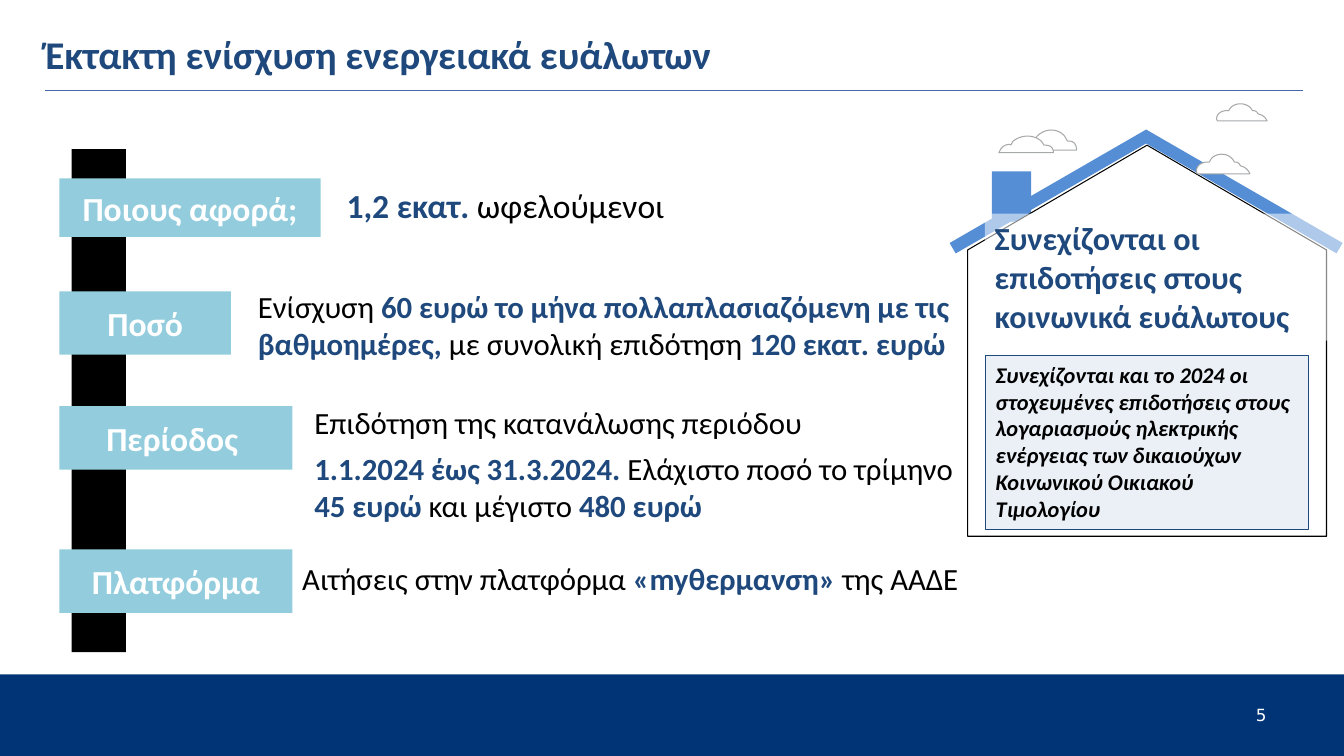
import pptx
import pptx.dml.color
import pptx.enum.shapes
import pptx.enum.text
import pptx.oxml
import pptx.oxml.ns
import pptx.util

THEME = {
    "navy": "003476", "blue": "1F497D", "rule": "4966AC", "roof": "558ED5",
    "label": "93CDDD", "note": "DCE6F2", "cloud": "A7A8AA",
    "black": "000000", "white": "FFFFFF",
    "font": "Calibri", "number_font": "DejaVu Sans",
    "title": 28, "heading": 24, "house": 23, "body": 22, "small": 16, "number": 12,
}
CELL = pptx.util.Inches(0.1)  # one column or row of the page grid
COLUMNS, ROWS = 133.33, 75
SHAPES = pptx.enum.shapes.MSO_SHAPE
MIDDLE = pptx.enum.text.MSO_ANCHOR.MIDDLE
CENTER = pptx.enum.text.PP_ALIGN.CENTER


def paint(shape, fill=None, line=None, opacity=100, weight=0.75):
    """Set fill and outline from theme colours and drop the shadow."""
    shape.shadow.inherit = False
    if fill:
        shape.fill.solid()
        shape.fill.fore_color.rgb = pptx.dml.color.RGBColor.from_string(THEME[fill])
        if opacity < 100:
            color = shape.fill._xPr.find(".//" + pptx.oxml.ns.qn("a:srgbClr"))
            alpha = color.makeelement(pptx.oxml.ns.qn("a:alpha"), {"val": str(opacity * 1000)})
            color.append(alpha)
    if line:
        shape.line.color.rgb = pptx.dml.color.RGBColor.from_string(THEME[line])
        shape.line.width = pptx.util.Pt(weight)
    else:
        shape.line.fill.background()
    return shape


def write(box, paragraphs, size="body", color="black", font="font", bold=False, italic=False,
          align=pptx.enum.text.PP_ALIGN.LEFT, anchor=pptx.enum.text.MSO_ANCHOR.TOP,
          margins=(0.1, 0.05), gap=0, line_spacing=None):
    """Fill a box with paragraphs, each a list of (text, is_key); key text is bold blue."""
    frame = box.text_frame
    frame.word_wrap = True
    frame.vertical_anchor = anchor
    frame.margin_left = frame.margin_right = pptx.util.Inches(margins[0])
    frame.margin_top = frame.margin_bottom = pptx.util.Inches(margins[1])
    for index, parts in enumerate(paragraphs):
        para = frame.add_paragraph() if index else frame.paragraphs[0]
        para.alignment = align
        para.line_spacing = line_spacing
        if index:
            para.space_before = pptx.util.Pt(gap)
        for text, is_key in parts:
            span = para.add_run()
            span.text = text
            span.font.name = THEME[font]
            span.font.size = pptx.util.Pt(THEME[size])
            span.font.bold = bold or is_key
            span.font.italic = italic
            span.font.color.rgb = pptx.dml.color.RGBColor.from_string(
                THEME["blue" if is_key else color])


deck = pptx.Presentation()
deck.slide_width, deck.slide_height = int(COLUMNS * CELL), ROWS * CELL
page = deck.slides.add_slide(deck.slide_layouts[6])
shapes = page.shapes

# Footer band, title and rule
footer = shapes.add_shape(SHAPES.RECTANGLE, 0, int(66.9 * CELL), deck.slide_width, int(8.1 * CELL))
paint(footer, "navy")
rule = shapes.add_connector(pptx.enum.shapes.MSO_CONNECTOR.STRAIGHT,
                            *[int(n * CELL) for n in (4.5, 9, 129.3, 9)])
rule.line.color.rgb = pptx.dml.color.RGBColor.from_string(THEME["rule"])
rule.line.width = pptx.util.Pt(0.96)
rule._element.spPr.append(pptx.oxml.parse_xml(
    f'<a:effectLst {pptx.oxml.ns.nsdecls("a")}/>'))
title = shapes.add_textbox(*[int(n * CELL) for n in (4.5, 0.5, 124.4, 9.7)])
write(title, [[("Έκτακτη ενίσχυση ενεργειακά ευάλωτων", True)]], size="title",
      anchor=MIDDLE, margins=(0, 0))

# House: chimney, walls and a roof mirrored about the apex
chimney = shapes.add_shape(SHAPES.RECTANGLE, *[int(n * CELL) for n in (98.4, 17, 3.9, 5)])
paint(chimney, "roof")
walls = shapes.add_shape(SHAPES.UP_ARROW, *[int(n * CELL) for n in (96, 14.4, 35.6, 38.8)])
walls.adjustments[0], walls.adjustments[1] = 1, 0.292
paint(walls, "white", "black")
APEX, SLOPE_LENGTH, SLOPE_OFFSET = 113.7, 22.5, 9.45
for side in (-1, 1):
    left = APEX + side * SLOPE_OFFSET - SLOPE_LENGTH / 2
    slope = shapes.add_shape(SHAPES.RECTANGLE,
                             *[int(n * CELL) for n in (left, 18.4, SLOPE_LENGTH, 1.2)])
    slope.rotation = side * 30
    paint(slope, "roof")

# Cloud outlines as shares of their box: one point is a line, three are a curve
STEPPED = [[(0.47, 0)], [(0.58, 0), (0.67, 0.16), (0.71, 0.4)], [(0.73, 0.4)],
           [(0.77, 0.4), (0.8, 0.47), (0.82, 0.57)], [(0.83, 0.6)],
           [(0.91, 0.64), (0.97, 0.8), (1, 1)], [(0.02, 1)],
           [(0, 0.95), (0, 0.9), (0, 0.85)], [(0, 0.6), (0.09, 0.4), (0.2, 0.4)],
           [(0.24, 0.4)], [(0.26, 0.3)], [(0.3, 0.1), (0.39, 0), (0.47, 0)]]
ROUND = [[(0.52, 0)], [(0.63, 0), (0.72, 0.12), (0.78, 0.31)], [(0.83, 0.55)],
         [(0.87, 0.55)], [(0.94, 0.55), (1, 0.72), (1, 0.94)], [(1, 1)], [(0, 1)],
         [(0.02, 0.88)], [(0.04, 0.69), (0.11, 0.5), (0.19, 0.5)], [(0.22, 0.53)],
         [(0.26, 0.31)], [(0.33, 0.12), (0.43, 0), (0.52, 0)]]
STEPS = 8
for outline, left, top, width, height in [
        (STEPPED, 118.7, 15.3, 5.3, 1.95), (ROUND, 101.5, 12.9, 5.3, 2),
        (ROUND, 99.1, 13.5, 5.4, 1.65), (STEPPED, 120.7, 10.3, 5, 1.7)]:
    points = list(outline[0])
    for segment in outline[1:]:
        if len(segment) == 1:
            points += segment
            continue
        corners = [points[-1], *segment]
        for step in range(1, STEPS + 1):
            t = step / STEPS
            weights = ((1 - t) ** 3, 3 * t * (1 - t) ** 2, 3 * t * t * (1 - t), t ** 3)
            points.append(tuple(sum(w * corner[axis] for w, corner in zip(weights, corners))
                                for axis in (0, 1)))
    spots = [(int((left + x * width) * CELL), int((top + y * height) * CELL)) for x, y in points]
    builder = shapes.build_freeform(*spots[0])
    builder.add_line_segments(spots[1:], close=True)
    paint(builder.convert_to_shape(), "white", "cloud")

# Spine with labels and their details
spine = shapes.add_shape(SHAPES.RECTANGLE, *[int(n * CELL) for n in (7.1, 14.8, 5.4, 49.9)])
paint(spine, "black")
TOPICS = [
    ("Ποιους αφορά;", (17.7, 25.9, 5.8), (33.4, 17.9, 72.6, 5), "heading",
     [[("1,2 εκατ. ", True), ("ωφελούμενοι", False)]]),
    ("Ποσό", (28.9, 17, 6.3), (24.6, 28.1, 72.6, 8.4), "body",
     [[("Ενίσχυση ", False), ("60 ευρώ το μήνα πολλαπλασιαζόμενη με τις βαθμοημέρες, ", True),
       ("με συνολική επιδότηση ", False), ("120 εκατ. ευρώ", True)]]),
    ("Περίοδος ", (40.3, 23.1, 6.3), (30.2, 39.6, 65.8, 13), "body",
     [[("Επιδότηση της κατανάλωσης περιόδου", False)],
      [("1.1.2024 έως 31.3.2024. ", True), ("Ελάχιστο ποσό το τρίμηνο ", False),
       ("45 ευρώ ", True), ("και μέγιστο ", False), ("480 ευρώ", True)]]),
    ("Πλατφόρμα", (54.5, 23.1, 6.3), (29, 55, 68.5, 4.7), "body",
     [[("Αιτήσεις στην πλατφόρμα ", False), ("«myθερμανση» ", True), ("της ΑΑΔΕ", False)]]),
]
for name, (top, width, height), detail_place, size, paragraphs in TOPICS:
    label = shapes.add_shape(SHAPES.RECTANGLE,
                             *[int(n * CELL) for n in (5.9, top, width, height)])
    paint(label, "label")
    write(label, [[(name, False)]], size="heading", color="white", bold=True,
          align=CENTER, anchor=MIDDLE, margins=(0.1, 0.1))
    detail = shapes.add_textbox(*[int(n * CELL) for n in detail_place])
    write(detail, paragraphs, size=size, gap=6)

# Texts inside the house
note = shapes.add_shape(SHAPES.RECTANGLE, *[int(n * CELL) for n in (97.8, 35.3, 32, 17.2)])
paint(note, "note", "blue", opacity=56)
write(note, [[("Συνεχίζονται και το 2024 οι στοχευμένες επιδοτήσεις στους λογαριασμούς "
               "ηλεκτρικής ενέργειας των δικαιούχων Κοινωνικού Οικιακού Τιμολογίου", False)]],
      size="small", bold=True, italic=True)
headline = shapes.add_shape(SHAPES.RECTANGLE, *[int(n * CELL) for n in (97.7, 21.2, 36.3, 12.6)])
paint(headline, "white", opacity=53)
write(headline, [[("Συνεχίζονται οι επιδοτήσεις στους κοινωνικά ευάλωτους", True)]], size="house")

number = shapes.add_textbox(*[int(n * CELL) for n in (124.2, 70.2, 4.6, 1.4)])
write(number, [[("5", False)]], size="number", color="white", font="number_font",
      margins=(0.04, 0), line_spacing=0.87)

deck.save("out.pptx")
